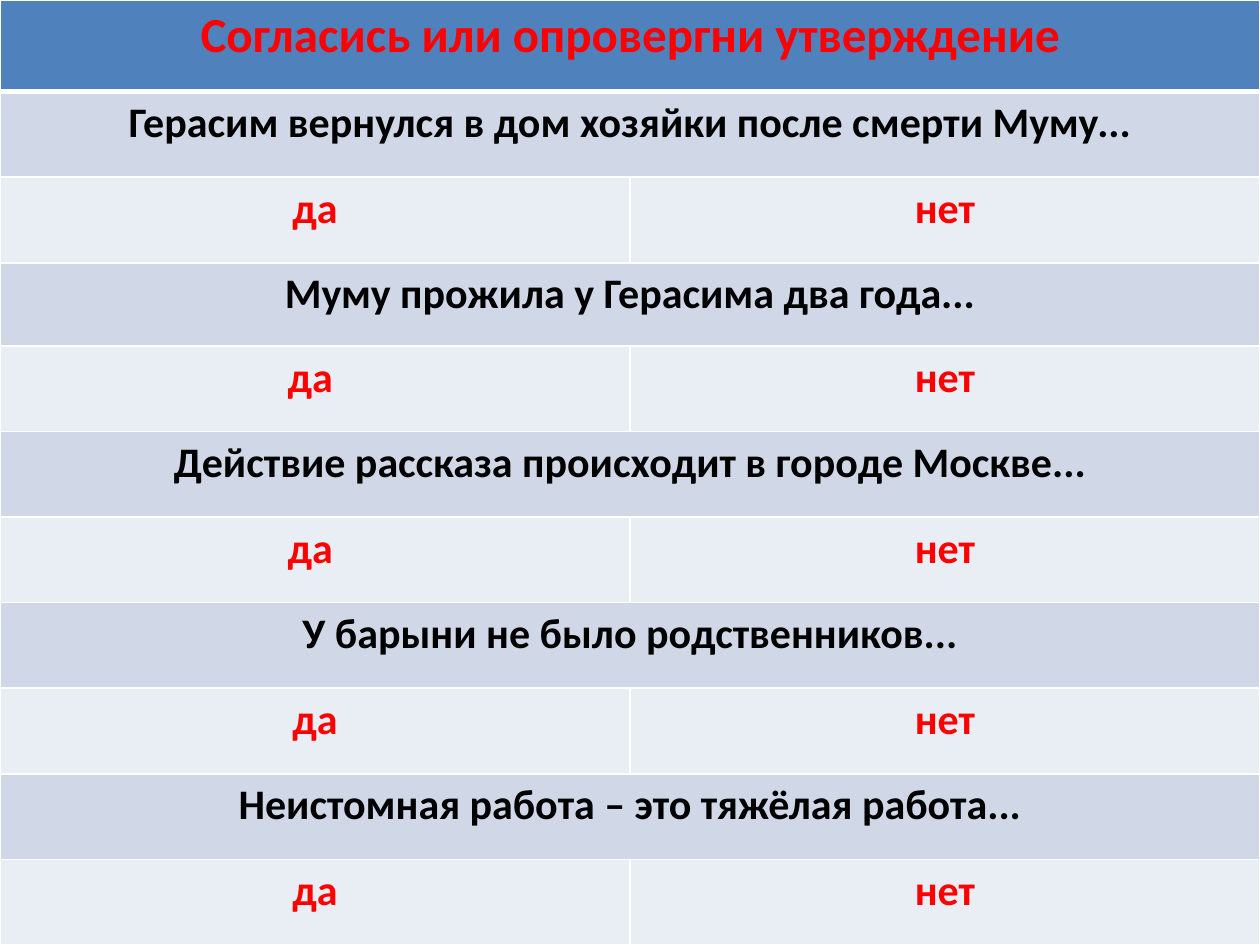
from lxml.etree import SubElement
from pptx import Presentation
from pptx.dml.color import RGBColor
from pptx.enum.text import PP_ALIGN
from pptx.oxml.ns import qn
from pptx.util import Pt

PAGE_WIDTH, PAGE_HEIGHT = Pt(720), Pt(540)
RED, BLACK, WHITE = "FF0000", "000000", "FFFFFF"
HEADER_FILL, STATEMENT_FILL, ANSWER_FILL = "4F81BD", "D0D8E8", "E9EDF4"
THIN, THICK = 1, 3

TITLE = "Согласись или опровергни утверждение"
# Each statement with its two answers
QUESTIONS = [
    ("Герасим вернулся в дом хозяйки после смерти Муму...", ("да", "нет")),
    ("Муму прожила у Герасима два года...", ("да ", "нет")),
    ("Действие рассказа происходит в городе Москве...", ("да ", "нет")),
    ("У барыни не было родственников...", ("да", "нет")),
    ("Неистомная работа – это тяжёлая работа...", ("да", "нет")),
]


def color(value):
    return RGBColor.from_string(value)


def style_cell(cell, text, fill, ink, size=24, top=THIN, bottom=THIN):
    # White borders; their elements must come before the fill
    properties = cell._tc.get_or_add_tcPr()
    for side, width in (("L", THIN), ("R", THIN), ("T", top), ("B", bottom)):
        border = SubElement(properties, qn(f"a:ln{side}"), w=str(Pt(width)))
        border_fill = SubElement(border, qn("a:solidFill"))
        SubElement(border_fill, qn("a:srgbClr"), val=WHITE)
    cell.fill.solid()
    cell.fill.fore_color.rgb = color(fill)

    # Centred bold text
    cell.text_frame.text = text
    paragraph = cell.text_frame.paragraphs[0]
    paragraph.alignment = PP_ALIGN.CENTER
    font = paragraph.runs[0].font
    font.name = "Calibri"
    font.size = Pt(size)
    font.bold = True
    font.color.rgb = color(ink)


deck = Presentation()
deck.slide_width, deck.slide_height = PAGE_WIDTH, PAGE_HEIGHT
page = deck.slides.add_slide(deck.slide_layouts[6])

# Table filling the page: a header, then two rows for each question
row_count = 1 + 2 * len(QUESTIONS)
table = page.shapes.add_table(row_count, 2, 0, 0, PAGE_WIDTH, PAGE_HEIGHT).table

# Equal rows, but a taller header and a shorter second statement
for row in table.rows:
    row.height = Pt(48.9)
table.rows[0].height = Pt(52.4)
table.rows[3].height = Pt(47.5)

# Header across both columns, with a thick line below
header = table.cell(0, 0)
header.merge(table.cell(0, 1))
style_cell(header, TITLE, HEADER_FILL, RED, size=28, bottom=THICK)

# A statement across both columns, then its answers side by side
for number, (statement, answers) in enumerate(QUESTIONS):
    statement_row = 1 + 2 * number
    answer_row = statement_row + 1

    statement_cell = table.cell(statement_row, 0)
    statement_cell.merge(table.cell(statement_row, 1))
    line_above = THICK if number == 0 else THIN
    style_cell(statement_cell, statement, STATEMENT_FILL, BLACK, top=line_above)

    for column, answer in enumerate(answers):
        style_cell(table.cell(answer_row, column), answer, ANSWER_FILL, RED)

deck.save("out.pptx")
